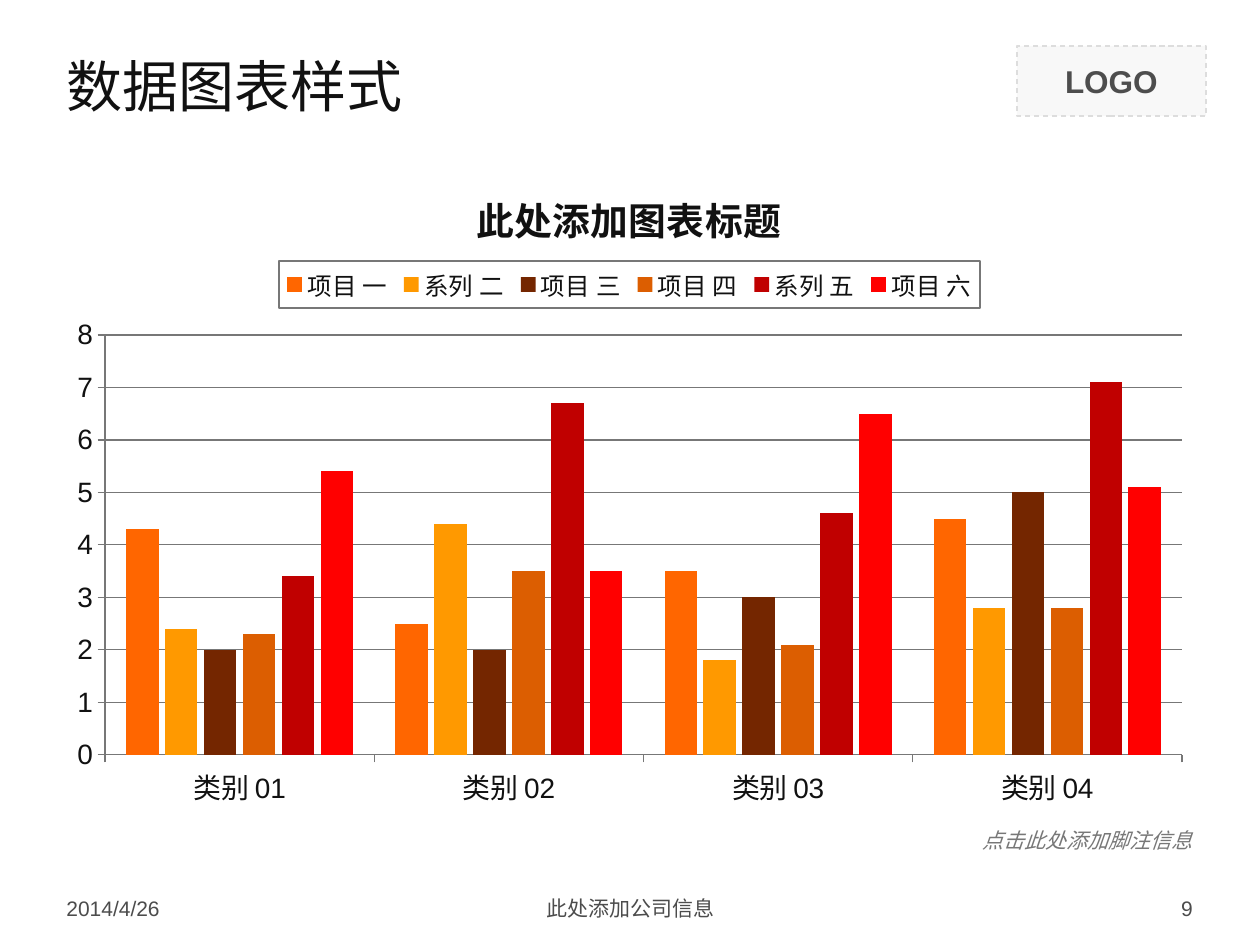
"""Build a title slide with a clustered column chart, logo box and footer."""
import lxml.etree
import pptx
import pptx.chart.data
import pptx.dml.color
import pptx.enum.chart
import pptx.enum.dml
import pptx.enum.shapes
import pptx.enum.text
import pptx.oxml
import pptx.oxml.ns
import pptx.util

RGB = pptx.dml.color.RGBColor
INK = RGB(0x11, 0x11, 0x11)
GREY = RGB(0x77, 0x77, 0x77)
FOOTER = RGB(0x4C, 0x4C, 0x4C)
LOGO_INK = RGB(0x4D, 0x4D, 0x4D)
LOGO_FILL = RGB(0xF8, 0xF8, 0xF8)
LOGO_LINE = RGB(0xDD, 0xDD, 0xDD)
ALIGN = pptx.enum.text.PP_ALIGN
ANCHOR = pptx.enum.text.MSO_ANCHOR
qn = pptx.oxml.ns.qn

TITLE = "数据图表样式"
CHART_TITLE = "此处添加图表标题"
CATEGORIES = ["类别 01", "类别 02", "类别 03", "类别 04"]
SERIES = [
    ("项目 一", (4.3, 2.5, 3.5, 4.5), RGB(0xFF, 0x66, 0x00)),
    ("系列 二", (2.4, 4.4, 1.8, 2.8), RGB(0xFF, 0x99, 0x00)),
    ("项目 三", (2, 2, 3, 5), RGB(0x74, 0x26, 0x00)),
    ("项目 四", (2.3, 3.5, 2.1, 2.8), RGB(0xDC, 0x5E, 0x01)),
    ("系列 五", (3.4, 6.7, 4.6, 7.1), RGB(0xC0, 0x00, 0x00)),
    ("项目 六", (5.4, 3.5, 6.5, 5.1), RGB(0xFF, 0x00, 0x00)),
]
CHART_BOX = (54, 165, 1152, 655)
PLOT_BOX = (105, 335, 1077, 420)
LEGEND_BOX = (279, 261, 701, 47)
TITLE_SPOT = (470, 179)
SMALL = {"size": 12, "color": FOOTER}
NOTES = [
    ("2014/4/26", (54, 890, 294, 36), ALIGN.LEFT, ANCHOR.MIDDLE, True, SMALL),
    ("此处添加公司信息", (431, 890, 399, 36), ALIGN.CENTER, ANCHOR.MIDDLE, True, SMALL),
    ("9", (911, 890, 294, 36), ALIGN.RIGHT, ANCHOR.MIDDLE, True, SMALL),
    ("点击此处添加脚注信息", (968, 821, 237, 38), ALIGN.RIGHT, ANCHOR.TOP, False,
     {"size": 12, "color": GREY, "italic": True}),
]


def px(box):
    return [pptx.util.Emu(round(n * 914400 / 126)) for n in box]


def style(font, size, color, name="Arial", **flags):
    values = {"size": pptx.util.Pt(size), "name": name, **flags}
    for key, value in values.items():
        setattr(font, key, value)
    font.color.rgb = color


def write(sp, text, align, anchor, wrap, **fmt):
    tf = sp.text_frame
    tf.text = text
    tf.word_wrap = wrap
    tf.vertical_anchor = anchor
    tf.paragraphs[0].alignment = align
    style(tf.paragraphs[0].runs[0].font, **fmt)


def outline(line, color=GREY):
    line.color.rgb = color
    line.width = pptx.util.Pt(0.75)


def place(element, index, spot, inner=False):
    for old in element.findall(qn("c:layout")):
        element.remove(old)
    layout = lxml.etree.Element(qn("c:layout"))
    manual = lxml.etree.SubElement(layout, qn("c:manualLayout"))
    left, top, width, height = CHART_BOX
    sizes = (width, height, width, height)
    shifts = (left, top, 0, 0)
    parts = [("layoutTarget", "inner")] if inner else []
    parts += [("xMode", "edge"), ("yMode", "edge")]
    parts += [(key, f"{(n - shift) / size:.4f}")
              for key, n, shift, size in zip("xywh", spot, shifts, sizes)]
    for tag, value in parts:
        lxml.etree.SubElement(manual, qn("c:" + tag)).set("val", value)
    element.insert(index, layout)


def add_chart(s):
    data = pptx.chart.data.CategoryChartData()
    data.categories = CATEGORIES
    for name, values, _ in SERIES:
        data.add_series(name, values)
    kind = pptx.enum.chart.XL_CHART_TYPE.COLUMN_CLUSTERED
    chart = s.shapes.add_chart(kind, *px(CHART_BOX), data).chart
    style(chart.font, 18, INK)

    chart.has_title = True
    tf = chart.chart_title.text_frame
    tf.text = CHART_TITLE
    style(tf.paragraphs[0].runs[0].font, 21.6, INK, bold=True)

    plot = chart.plots[0]
    plot.gap_width, plot.overlap, plot.vary_by_categories = 130, -20, False
    for series, (_, _, color) in zip(plot.series, SERIES):
        series.format.fill.solid()
        series.format.fill.fore_color.rgb = color

    for axis in (chart.category_axis, chart.value_axis):
        style(axis.tick_labels.font, 16, INK)
        axis.major_tick_mark = pptx.enum.chart.XL_TICK_MARK.OUTSIDE
        outline(axis.format.line)
    axis = chart.value_axis
    axis.minimum_scale, axis.maximum_scale, axis.major_unit = 0, 8, 1
    outline(axis.major_gridlines.format.line)

    chart.has_legend = True
    legend = chart.legend
    legend.position = pptx.enum.chart.XL_LEGEND_POSITION.TOP
    legend.include_in_layout = False
    style(legend.font, 14, INK)
    root = chart.element
    box = root.find(".//" + qn("c:legend"))
    border = pptx.oxml.parse_xml(
        f'<c:spPr {pptx.oxml.ns.nsdecls("c", "a")}><a:noFill/><a:ln w="9525">'
        f'<a:solidFill><a:srgbClr val="{GREY}"/></a:solidFill></a:ln></c:spPr>')
    box.find(qn("c:txPr")).addprevious(border)
    place(box, 1, LEGEND_BOX)
    place(root.find(".//" + qn("c:plotArea")), 0, PLOT_BOX, inner=True)
    place(root.find(".//" + qn("c:title")), 1, TITLE_SPOT)


def main():
    prs = pptx.Presentation()
    prs.slide_width, prs.slide_height = px((1260, 945))
    s = prs.slides.add_slide(prs.slide_layouts[5])

    sp = s.shapes.add_shape(pptx.enum.shapes.MSO_SHAPE.RECTANGLE, *px((1017, 46, 189, 70)))
    sp.shadow.inherit = False
    sp.fill.solid()
    sp.fill.fore_color.rgb = LOGO_FILL
    outline(sp.line, LOGO_LINE)
    sp.line.dash_style = pptx.enum.dml.MSO_LINE.DASH
    write(sp, "LOGO", ALIGN.CENTER, ANCHOR.MIDDLE, True, size=18, color=LOGO_INK, bold=True)

    title = s.shapes.title
    title.left, title.top, title.width, title.height = px((54, 36, 1152, 99))
    write(title, TITLE, ALIGN.LEFT, ANCHOR.MIDDLE, True, size=32, color=INK, name="Montserrat")
    title.text_frame.auto_size = pptx.enum.text.MSO_AUTO_SIZE.NONE

    add_chart(s)
    for text, box, align, anchor, wrap, fmt in NOTES:
        write(s.shapes.add_textbox(*px(box)), text, align, anchor, wrap, **fmt)
    prs.save("out.pptx")


if __name__ == "__main__":
    main()
